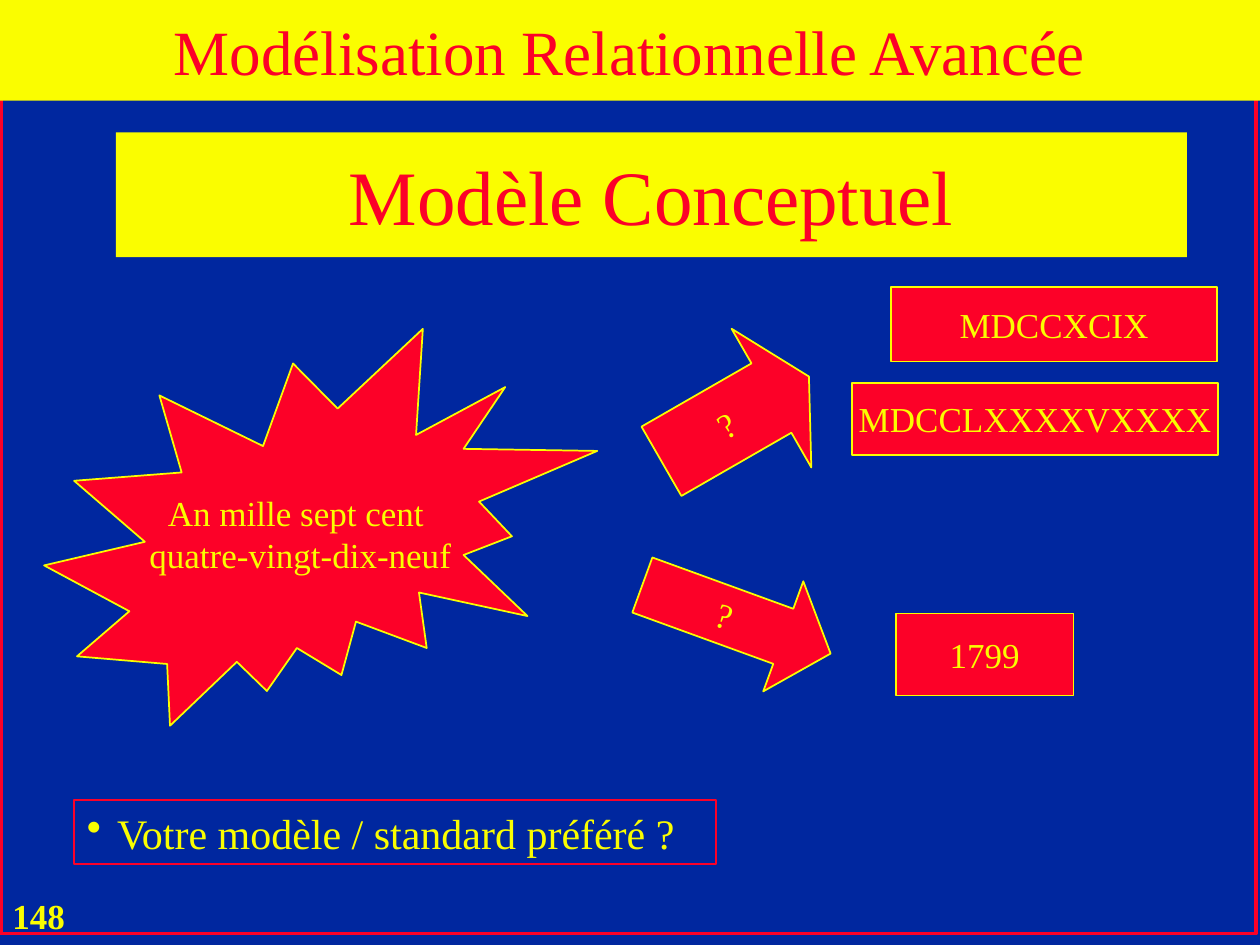
from dataclasses import dataclass

from lxml.etree import SubElement
from pptx import Presentation
from pptx.dml.color import RGBColor
from pptx.enum.shapes import MSO_SHAPE as Shape
from pptx.enum.text import MSO_ANCHOR as Anchor, PP_ALIGN as Align
from pptx.oxml.ns import qn
from pptx.util import Inches, Pt


@dataclass(frozen=True)
class Theme:
    font: str = "Times New Roman"
    blue: RGBColor = RGBColor(0x00, 0x27, 0x9F)
    red: RGBColor = RGBColor(0xFC, 0x01, 0x28)
    yellow: RGBColor = RGBColor(0xFA, 0xFD, 0x00)
    title_size: int = 44
    banner_size: int = 36
    bullet_size: int = 24
    body_size: int = 20


class SlideBuilder:
    def __init__(self, deck, theme):
        self.theme = theme
        self.slide = deck.slides.add_slide(deck.slide_layouts[5])
        background = self.slide.background.fill
        background.solid()
        background.fore_color.rgb = theme.blue

    def set_text(self, box, text, size, color, align=Align.CENTER, wrap=True, bold=False):
        frame = box.text_frame
        frame.text = text
        frame.word_wrap = wrap
        frame.vertical_anchor = Anchor.MIDDLE
        for para in frame.paragraphs:
            para.alignment = align
            for span in para.runs:
                font = span.font
                font.name, font.size, font.bold = self.theme.font, Pt(size), bold
                font.color.rgb = color

    def paint(self, box, color):
        box.fill.solid()
        box.fill.fore_color.rgb = color

    def shape(self, place, kind=Shape.RECTANGLE, fill=None, line=None, width=1):
        box = self.slide.shapes.add_shape(kind, *map(Inches, place))
        box.shadow.inherit = False
        if fill is None:
            box.fill.background()
        else:
            self.paint(box, fill)
        if line is None:
            box.line.fill.background()
        else:
            box.line.color.rgb = line
            box.line.width = Pt(width)
        return box

    def title(self, place, text):
        box = self.slide.shapes.title
        box.left, box.top, box.width, box.height = map(Inches, place)
        self.paint(box, self.theme.yellow)
        self.set_text(box, text, self.theme.title_size, self.theme.red)

    def banner(self, place, text):
        box = self.shape(place, fill=self.theme.yellow)
        self.set_text(box, text, self.theme.banner_size, self.theme.red)

    def label(self, place, text, kind=Shape.RECTANGLE):
        """Add a red shape with a yellow outline and yellow centred text."""
        theme = self.theme
        box = self.shape(place, kind, theme.red, theme.yellow)
        self.set_text(box, text, theme.body_size, theme.yellow, wrap=False)
        return box

    def arrow(self, place, text, rotation, head):
        box = self.label(place, text, Shape.RIGHT_ARROW)
        box.rotation = rotation
        box.adjustments[0] = 0.5
        box.adjustments[1] = head

    def bullet(self, place, text):
        theme = self.theme
        box = self.shape(place, line=theme.red)
        self.set_text(box, text, theme.bullet_size, theme.yellow, Align.LEFT)
        indent = Inches(0.24)
        properties = box.text_frame.paragraphs[0]._p.get_or_add_pPr()
        properties.set("marL", str(indent))
        properties.set("indent", str(-indent))
        SubElement(properties, qn("a:buChar")).set("char", "•")

    def page_number(self, place, text):
        box = self.slide.shapes.add_textbox(*map(Inches, place))
        self.set_text(box, text, self.theme.body_size, self.theme.yellow,
                      Align.LEFT, wrap=False, bold=True)


def main():
    deck = Presentation()
    deck.slide_width, deck.slide_height = Inches(10), Inches(7.5)
    theme = Theme()
    page = SlideBuilder(deck, theme)

    page.page_number((0, 7.05, 0.69, 0.43), "148")
    page.shape((0.01, 0.01, 9.96, 7.4), line=theme.red, width=2)
    page.title((0.92, 1.05, 8.5, 0.99), "Modèle Conceptuel")
    page.label((0.35, 2.61, 4.39, 3.15),
               "An mille sept cent \nquatre-vingt-dix-neuf", Shape.EXPLOSION2)
    page.arrow((5.16, 2.69, 1.35, 1.27), "?", rotation=330.1, head=0.27)
    page.arrow((5.05, 4.45, 1.59, 0.93), "?", rotation=20, head=0.43)
    page.label((7.07, 2.28, 2.59, 0.59), "MDCCXCIX")
    page.label((6.76, 3.04, 2.91, 0.57), "MDCCLXXXXVXXXX")
    page.label((7.11, 4.87, 1.41, 0.65), "1799")
    page.bullet((0.59, 6.35, 5.09, 0.51), "Votre modèle / standard préféré ?")
    page.banner((0, 0, 10, 0.8), "Modélisation Relationnelle Avancée")

    deck.save("out.pptx")


if __name__ == "__main__":
    main()
